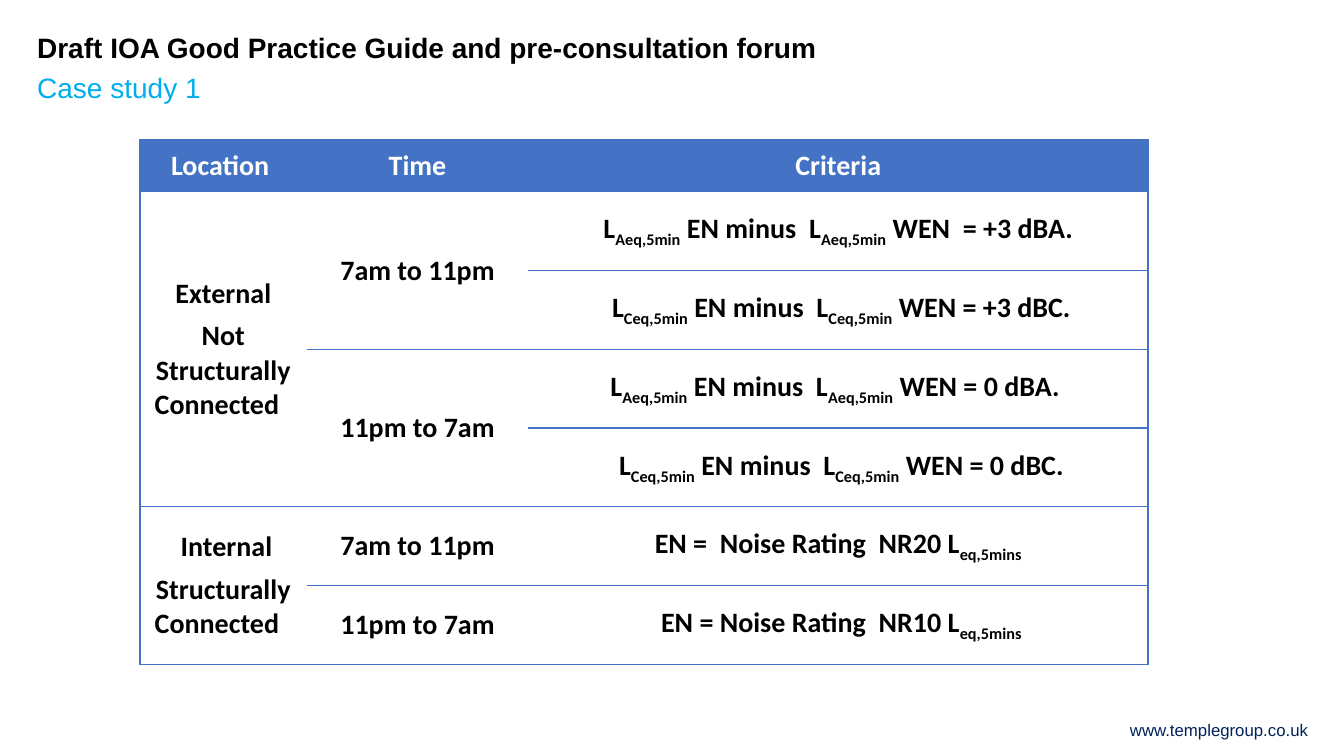
from dataclasses import dataclass

from lxml import etree
from pptx import Presentation
from pptx.dml.color import RGBColor
from pptx.enum.text import MSO_ANCHOR, PP_ALIGN
from pptx.oxml.ns import qn
from pptx.util import Pt

LEFT, CENTER, RIGHT = PP_ALIGN.LEFT, PP_ALIGN.CENTER, PP_ALIGN.RIGHT
MIDDLE = MSO_ANCHOR.MIDDLE
BLANK_LAYOUT = 6


@dataclass(frozen=True)
class Theme:
    heading_font: str = "Arial"
    table_font: str = "Calibri"
    main_size: int = 20
    footer_size: int = 12
    black: str = "000000"
    white: str = "FFFFFF"
    cyan: str = "00AEEF"
    navy: str = "002159"
    blue: str = "4472C4"
    rule_width: int = 1
    paragraph_gap: int = 6
    cell_margin: int = 5


COLUMN_WIDTHS = [119, 158.5, 442.5]
HEADER_HEIGHT, ROW_HEIGHT = 37, 56.25
HEADERS = ["Location ", "Time", "Criteria"]
# Text between bars is subscript; each line is a paragraph; None continues the cell above.
CRITERIA_ROWS = [
    ["External\nNot Structurally Connected  ", "7am to 11pm",
     " L|Aeq,5min| EN minus  L|Aeq,5min| WEN  = +3 dBA. "],
    [None, None, " L|Ceq,5min| EN minus  L|Ceq,5min| WEN = +3 dBC."],
    [None, "11pm to 7am", "L|Aeq,5min| EN minus  L|Aeq,5min| WEN = 0 dBA. "],
    [None, None, " L|Ceq,5min| EN minus  L|Ceq,5min| WEN = 0 dBC."],
    [" Internal\nStructurally Connected  ", "7am to 11pm",
     "EN =  Noise Rating  NR20 L|eq,5mins|"],
    [None, "11pm to 7am", " EN = Noise Rating  NR10 L|eq,5mins|"],
]


class SlideBuilder:
    def __init__(self, slide, theme):
        self.slide = slide
        self.theme = theme

    def add_run(self, paragraph, text, font, size, color, bold=False, subscript=False):
        run = paragraph.add_run()
        run.text = text
        run.font.name = font
        run.font.size = Pt(size)
        run.font.bold = bold
        run.font.color.rgb = RGBColor.from_string(color)
        if subscript:
            run._r.get_or_add_rPr().set("baseline", "-25000")

    def add_text(self, box, text, size, color, bold=False, alignment=LEFT):
        shape = self.slide.shapes.add_textbox(*map(Pt, box))
        frame = shape.text_frame
        frame.word_wrap = True
        frame.margin_left = frame.margin_right = 0
        frame.margin_top = frame.margin_bottom = 0
        paragraph = frame.paragraphs[0]
        paragraph.alignment = alignment
        self.add_run(paragraph, text, self.theme.heading_font, size, color, bold)

    def set_borders(self, cell, visible_sides):
        """Rule the sides named among L, R, T and B, and clear the others."""
        properties = cell._tc.get_or_add_tcPr()
        for side in "LRTB":
            line = etree.SubElement(properties, qn(f"a:ln{side}"))
            if side in visible_sides:
                line.set("w", str(Pt(self.theme.rule_width)))
                fill = etree.SubElement(line, qn("a:solidFill"))
                etree.SubElement(fill, qn("a:srgbClr"), val=self.theme.blue)
            else:
                etree.SubElement(line, qn("a:noFill"))

    def fill_cell(self, cell, text, color):
        theme = self.theme
        cell.vertical_anchor = MIDDLE
        cell.margin_left = cell.margin_right = Pt(theme.cell_margin)
        cell.margin_top = cell.margin_bottom = 0
        frame = cell.text_frame
        for index, line in enumerate(text.split("\n")):
            paragraph = frame.add_paragraph() if index else frame.paragraphs[0]
            paragraph.alignment = CENTER
            if index:
                paragraph.space_before = Pt(theme.paragraph_gap)
            for position, part in enumerate(line.split("|")):
                if part:
                    self.add_run(paragraph, part, theme.table_font, theme.main_size,
                                 color, bold=True, subscript=position % 2 == 1)

    def add_table(self, left, top, rows, column_widths, row_heights):
        theme = self.theme
        shape = self.slide.shapes.add_table(
            len(rows), len(column_widths), Pt(left), Pt(top),
            Pt(sum(column_widths)), Pt(sum(row_heights)))
        table = shape.table
        for column, width in zip(table.columns, column_widths):
            column.width = Pt(width)
        for row, height in zip(table.rows, row_heights):
            row.height = Pt(height)
        last_column = len(column_widths) - 1
        for row_index, row in enumerate(rows):
            for column_index, text in enumerate(row):
                cell = table.cell(row_index, column_index)
                end = row_index + 1
                while end < len(rows) and rows[end][column_index] is None:
                    end += 1
                sides = "L" if column_index == 0 else ""
                sides += "R" if column_index == last_column else ""
                sides += "T" if text is not None else ""
                sides += "B" if text is not None or end == row_index + 1 else ""
                self.set_borders(cell, sides)
                if row_index == 0:
                    cell.fill.solid()
                    cell.fill.fore_color.rgb = RGBColor.from_string(theme.blue)
                else:
                    cell.fill.background()
                if text is None:
                    continue
                if end > row_index + 1:
                    cell.merge(table.cell(end - 1, column_index))
                self.fill_cell(cell, text, theme.black if row_index else theme.white)


def main():
    presentation = Presentation()
    presentation.slide_width, presentation.slide_height = Pt(960), Pt(540)
    slide = presentation.slides.add_slide(presentation.slide_layouts[BLANK_LAYOUT])
    theme = Theme()
    builder = SlideBuilder(slide, theme)
    builder.add_text((26.5, 21.75, 754, 24.5),
                     "Draft IOA Good Practice Guide and pre-consultation forum",
                     theme.main_size, theme.black, bold=True)
    builder.add_text((26.5, 50.5, 754, 29), "Case study 1", theme.main_size, theme.cyan)
    builder.add_table(100, 100, [HEADERS, *CRITERIA_ROWS], COLUMN_WIDTHS,
                      [HEADER_HEIGHT] + [ROW_HEIGHT] * len(CRITERIA_ROWS))
    builder.add_text((710.5, 514, 224, 14.5), "www.templegroup.co.uk",
                     theme.footer_size, theme.navy, alignment=RIGHT)
    presentation.save("out.pptx")


if __name__ == "__main__":
    main()
